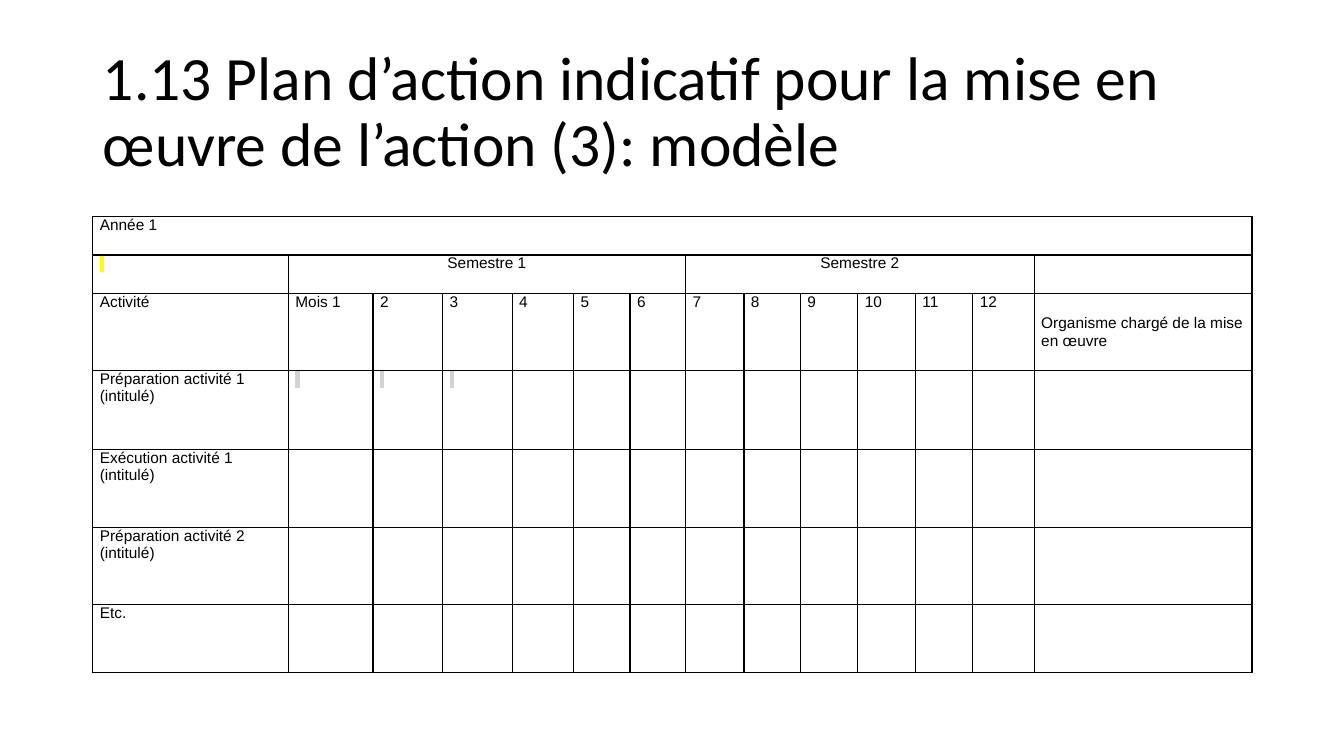
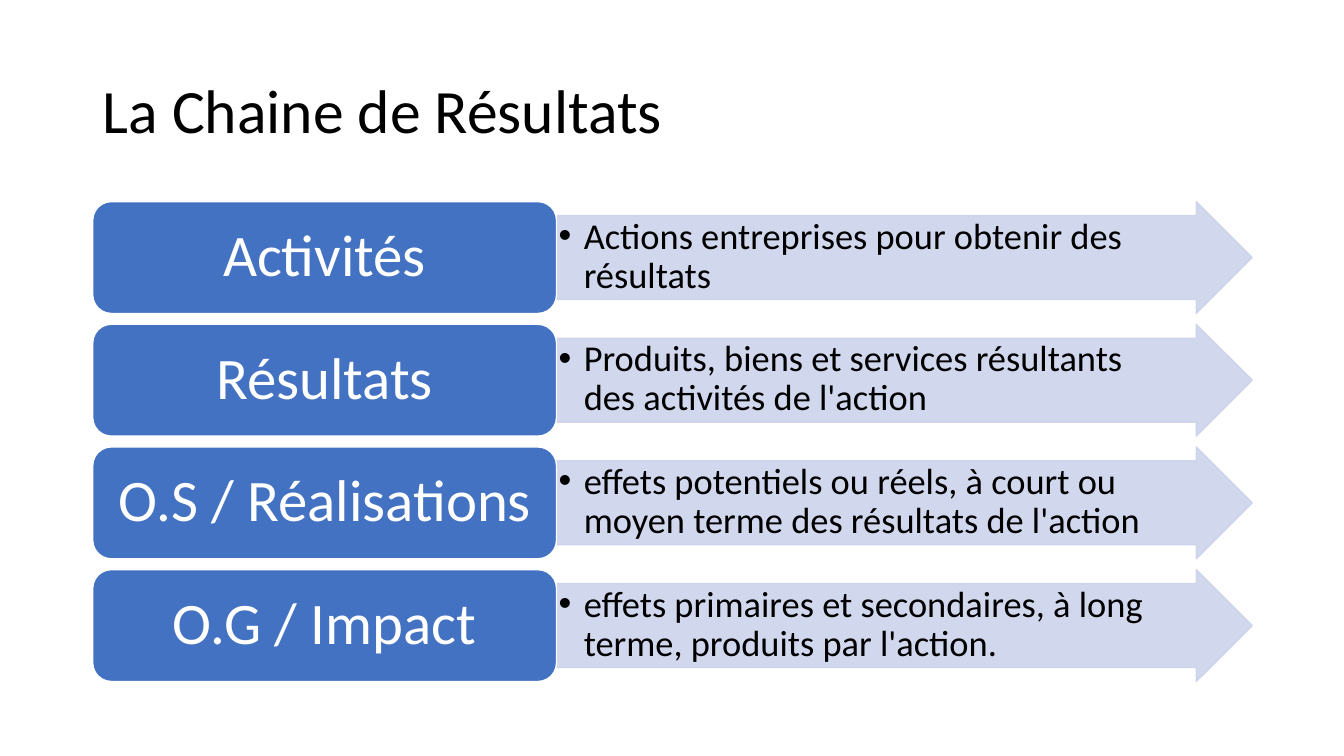
from dataclasses import dataclass

from lxml.etree import SubElement
from pptx import Presentation
from pptx.dml.color import RGBColor as Rgb
from pptx.enum.shapes import MSO_SHAPE as Shape
from pptx.enum.text import MSO_ANCHOR as Anchor, PP_ALIGN as Align
from pptx.oxml.ns import qn
from pptx.util import Inches, Pt


@dataclass(frozen=True)
class Theme:
    black: str = "000000"
    white: str = "FFFFFF"
    blue: str = "4372C3"
    pale: str = "CCD3EA"
    yellow: str = "FFFF00"
    grey: str = "D3D3D3"
    head: str = "Calibri"
    body: str = "Arial"
    title: int = 44
    label: int = 42
    point: int = 26
    small: int = 11
    left: float = 0.92
    width: float = 11.5
    alpha: int = 89000


@dataclass(frozen=True)
class Step:
    name: str
    note: str


THEME = Theme()
COLS = (1.94, 0.84, 0.69, 0.69, 0.61, 0.56, 0.55,
        0.58, 0.56, 0.57, 0.57, 0.57, 0.61, 2.16)
ROWS = (0.38, 0.38, 0.77, 0.78, 0.77, 0.77, 0.67)
TASKS = ("Préparation activité 1 (intitulé)", "Exécution activité 1 (intitulé)",
         "Préparation activité 2 (intitulé)")
STEPS = (
    Step("Activités", "Actions entreprises pour obtenir des résultats"),
    Step("Résultats", "Produits, biens et services résultants des activités de l'action"),
    Step("O.S / Réalisations",
         "effets potentiels ou réels, à court ou moyen terme des résultats de l'action"),
    Step("O.G / Impact",
         "effets primaires et secondaires, à long terme, produits par l'action."),
)


def style(para, font: str, size: int, color: str, align=Align.LEFT) -> None:
    para.alignment = align
    para.font.name = font
    para.font.size = Pt(size)
    para.font.color.rgb = Rgb.from_string(color)


def start(deck, text: str):
    slide = deck.slides.add_slide(deck.slide_layouts[5])
    title = slide.shapes.title
    title.left, title.top = Inches(THEME.left), Inches(0.4)
    title.width, title.height = Inches(THEME.width), Inches(1.45)
    title.text_frame.text = text
    title.text_frame.vertical_anchor = Anchor.MIDDLE
    para = title.text_frame.paragraphs[0]
    para.line_spacing = 0.9
    style(para, THEME.head, THEME.title, THEME.black)
    return slide


def rule(cell) -> None:
    props = cell._tc.get_or_add_tcPr()
    for side in ("lnL", "lnR", "lnT", "lnB"):
        line = SubElement(props, qn(f"a:{side}"), w=str(Pt(1)))
        fill = SubElement(line, qn("a:solidFill"))
        SubElement(fill, qn("a:srgbClr"), val=THEME.black)


def write(cell, text: str, align=Align.JUSTIFY) -> None:
    cell.text = text
    style(cell.text_frame.paragraphs[0], THEME.body, THEME.small, THEME.black, align)


def mark(cell, color: str) -> None:
    write(cell, " ")
    props = cell.text_frame.paragraphs[0].runs[0]._r.get_or_add_rPr()
    light = SubElement(props, qn("a:highlight"))
    SubElement(light, qn("a:srgbClr"), val=color)


def plan(deck) -> None:
    slide = start(deck, "1.13 Plan d’action indicatif pour la mise en œuvre "
                        "de l’action (3): modèle")
    grid = slide.shapes.add_table(
        len(ROWS), len(COLS), Inches(THEME.left), Inches(2.15),
        Inches(sum(COLS)), Inches(sum(ROWS))).table
    grid.first_row = grid.horz_banding = False
    for col, width in zip(grid.columns, COLS):
        col.width = Inches(width)
    for row, height in zip(grid.rows, ROWS):
        row.height = Inches(height)
    for cell in grid.iter_cells():
        rule(cell)
        cell.fill.solid()
        cell.fill.fore_color.rgb = Rgb.from_string(THEME.white)
        cell.margin_left = cell.margin_right = Inches(0.07)
        cell.margin_top = cell.margin_bottom = 0
        write(cell, "")

    last = len(COLS) - 1
    grid.cell(0, 0).merge(grid.cell(0, last))
    write(grid.cell(0, 0), "Année 1")
    for half in (1, 2):
        first = 6 * half - 5
        grid.cell(1, first).merge(grid.cell(1, first + 5))
        write(grid.cell(1, first), f"Semestre {half}", Align.CENTER)
    write(grid.cell(2, 0), "Activité")
    for month in range(1, 13):
        write(grid.cell(2, month), "Mois 1" if month == 1 else str(month))
    write(grid.cell(2, last), "Organisme chargé de la mise en œuvre", Align.LEFT)
    grid.cell(2, last).vertical_anchor = Anchor.MIDDLE
    for row, task in enumerate(TASKS, 3):
        write(grid.cell(row, 0), task, Align.LEFT)
    write(grid.cell(6, 0), "Etc.")
    mark(grid.cell(1, 0), THEME.yellow)
    for month in (1, 2, 3):
        mark(grid.cell(3, month), THEME.grey)


def block(slide, kind, box: tuple[float, ...], fill: str, edge: str,
          text: str, pads: tuple[float, ...]):
    shape = slide.shapes.add_shape(kind, *map(Inches, box))
    shape.shadow.inherit = False
    shape.fill.solid()
    shape.fill.fore_color.rgb = Rgb.from_string(fill)
    shape.line.color.rgb = Rgb.from_string(edge)
    shape.line.width = Pt(1)
    frame = shape.text_frame
    frame.word_wrap = True
    frame.text = text
    frame.paragraphs[0].line_spacing = 0.9
    (frame.margin_left, frame.margin_top,
     frame.margin_right, frame.margin_bottom) = map(Inches, pads)
    return shape


def bullet(para) -> None:
    props = para._p.get_or_add_pPr()
    props.set("marL", str(Inches(0.25)))
    props.set("indent", str(-Inches(0.25)))
    color = SubElement(props, qn("a:buClr"))
    SubElement(color, qn("a:srgbClr"), val=THEME.black)
    SubElement(props, qn("a:buFont"), typeface=THEME.body)
    SubElement(props, qn("a:buChar"), char="•")


def chain(deck) -> None:
    slide = start(deck, "La Chaine de Résultats")
    wide, high, pitch = 4.6, 1.11, 1.217
    for index, step in enumerate(STEPS):
        top = 2 + index * pitch
        arrow = block(slide, Shape.RIGHT_ARROW,
                      (THEME.left + wide, top, THEME.width - wide, high),
                      THEME.pale, THEME.pale, step.note, (0.02, 0.02, 0.29, 0.02))
        arrow.adjustments[0] = 0.75
        arrow.adjustments[1] = 0.5
        for color in arrow._element.spPr.iter(qn("a:srgbClr")):
            SubElement(color, qn("a:alpha"), val=str(THEME.alpha))
        arrow.text_frame.vertical_anchor = Anchor.TOP
        para = arrow.text_frame.paragraphs[0]
        bullet(para)
        style(para, THEME.head, THEME.point, THEME.black)

        label = block(slide, Shape.ROUNDED_RECTANGLE, (THEME.left, top, wide, high),
                      THEME.blue, THEME.white, step.name, (0.17, 0.09, 0.17, 0.09))
        label.text_frame.vertical_anchor = Anchor.MIDDLE
        style(label.text_frame.paragraphs[0], THEME.head, THEME.label,
              THEME.white, Align.CENTER)


def main() -> None:
    deck = Presentation()
    deck.slide_width, deck.slide_height = Inches(13.33), Inches(7.5)
    plan(deck)
    chain(deck)
    deck.save("out.pptx")


if __name__ == "__main__":
    main()
